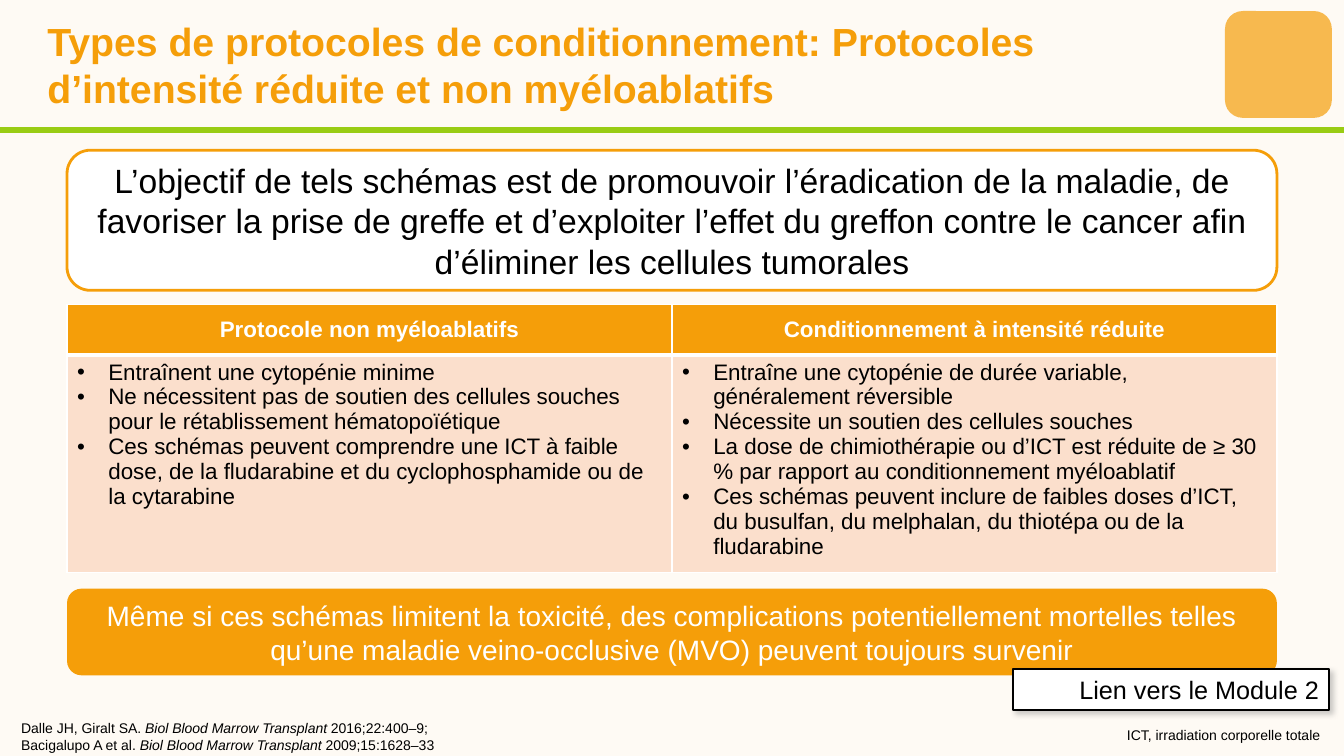
from dataclasses import dataclass

from lxml.etree import SubElement
from pptx import Presentation
from pptx.dml.color import RGBColor
from pptx.enum.shapes import MSO_CONNECTOR, MSO_SHAPE
from pptx.enum.text import MSO_ANCHOR, MSO_AUTO_SIZE, PP_ALIGN
from pptx.oxml.ns import qn
from pptx.util import Inches, Pt

TITLE = "Types de protocoles de conditionnement: Protocoles d’intensité réduite et non myéloablatifs"
OBJECTIVE = (
    "L’objectif de tels schémas est de promouvoir l’éradication de la maladie, de favoriser la prise "
    "de greffe et d’exploiter l’effet du greffon contre le cancer afin d’éliminer les cellules tumorales"
)
PROTOCOLS = {
    "Protocole non myéloablatifs": [
        "Entraînent une cytopénie minime",
        "Ne nécessitent pas de soutien des cellules souches pour le rétablissement hématopoïétique",
        "Ces schémas peuvent comprendre une ICT à faible dose, de la fludarabine et du cyclophosphamide "
        "ou de la cytarabine",
    ],
    "Conditionnement à intensité réduite": [
        "Entraîne une cytopénie de durée variable, généralement réversible",
        "Nécessite un soutien des cellules souches",
        "La dose de chimiothérapie ou d’ICT est réduite de ≥ 30 % par rapport au conditionnement myéloablatif",
        "Ces schémas peuvent inclure de faibles doses d’ICT, du busulfan, du melphalan, du thiotépa "
        "ou de la fludarabine",
    ],
}
WARNING = (
    "Même si ces schémas limitent la toxicité, des complications potentiellement mortelles telles "
    "qu’une maladie veino-occlusive (MVO) peuvent toujours survenir"
)
MODULE_LINK = "Lien vers le Module 2"
JOURNAL = "Biol Blood Marrow Transplant "
REFERENCES = [
    ("Dalle JH, Giralt SA. ", JOURNAL, "2016;22:400–9;"),
    ("Bacigalupo A et al. ", JOURNAL, "2009;15:1628–33"),
]
ABBREVIATION = "ICT, irradiation corporelle totale "


@dataclass(frozen=True)
class Theme:
    font: str = "Arial"
    background: str = "FEFAF4"
    accent: str = "F59E09"
    rule: str = "99CC14"
    cell: str = "FBDFCC"
    white: str = "FFFFFF"
    black: str = "000000"
    shadow: str = "808080"
    title_size: int = 28
    objective_size: int = 24
    warning_size: int = 20
    link_size: int = 18
    table_size: int = 16
    note_size: int = 10


THEME = Theme()
WIDTH, HEIGHT = 13.33, 7.5
CONTENT_WIDTH = 12
MARGIN = (WIDTH - CONTENT_WIDTH) / 2
ROW_HEIGHTS = [0.5, 2.16]
NOTE_WIDTH, NOTE_HEIGHT = 7.98, 0.32


def color(value):
    return RGBColor.from_string(value)


def place(shape, left, top, width, height):
    shape.left, shape.top = Inches(left), Inches(top)
    shape.width, shape.height = Inches(width), Inches(height)


def add_run(paragraph, text, size, ink=THEME.black, bold=False, italic=False):
    run = paragraph.add_run()
    run.text = text
    font = run.font
    font.name, font.size, font.bold, font.italic = THEME.font, Pt(size), bold, italic
    font.color.rgb = color(ink)


def write(frame, text, align=PP_ALIGN.LEFT, anchor=MSO_ANCHOR.MIDDLE, **run_format):
    frame.word_wrap = True
    frame.auto_size = MSO_AUTO_SIZE.NONE
    frame.vertical_anchor = anchor
    paragraph = frame.paragraphs[0]
    paragraph.alignment = align
    paragraph.space_before = Pt(0)
    if text:
        add_run(paragraph, text, **run_format)
    return paragraph


def set_bullet(paragraph, indent, character=None):
    properties = paragraph._p.get_or_add_pPr()
    properties.set("marL", str(Inches(indent)))
    properties.set("indent", str(-Inches(indent)))
    if character:
        SubElement(properties, qn("a:buFont"), typeface=THEME.font)
        SubElement(properties, qn("a:buChar"), char=character)
    else:
        SubElement(properties, qn("a:buNone"))


def add_box(slide, preset, bounds, fill, line=None, line_width=0):
    shape = slide.shapes.add_shape(preset, 0, 0, 0, 0)
    place(shape, *bounds)
    shape.shadow.inherit = False
    shape.fill.solid()
    shape.fill.fore_color.rgb = color(fill)
    if line:
        shape.line.color.rgb = color(line)
        shape.line.width = Pt(line_width)
    else:
        shape.line.fill.background()
    return shape


def add_header(slide):
    corner = add_box(slide, MSO_SHAPE.ROUNDED_RECTANGLE, (12.15, 0.11, 1.06, 1.06), THEME.accent)
    SubElement(corner._element.spPr.find(".//" + qn("a:srgbClr")), qn("a:alpha"), val="70000")
    rule = slide.shapes.add_connector(MSO_CONNECTOR.STRAIGHT, 0, Inches(1.29), Inches(WIDTH), Inches(1.29))
    rule.line.color.rgb = color(THEME.rule)
    rule.line.width = Pt(4.5)
    SubElement(rule._element.spPr, qn("a:effectLst"))
    title = slide.shapes.title
    place(title, 0.37, 0.09, 11.78, 1.1)
    write(title.text_frame, TITLE, size=THEME.title_size, ink=THEME.accent, bold=True)


def add_notes(slide):
    references, abbreviation = slide.placeholders[1], slide.placeholders[2]
    place(references, 0.11, 7.2, NOTE_WIDTH, NOTE_HEIGHT)
    place(abbreviation, 5.25, 7.1, NOTE_WIDTH, NOTE_HEIGHT)
    paragraph = write(references.text_frame, "", anchor=MSO_ANCHOR.BOTTOM)
    set_bullet(paragraph, 0)
    for number, (authors, journal, citation) in enumerate(REFERENCES):
        if number:
            paragraph.add_line_break()
        add_run(paragraph, authors, THEME.note_size)
        add_run(paragraph, journal, THEME.note_size, italic=True)
        add_run(paragraph, citation, THEME.note_size)
    paragraph = write(abbreviation.text_frame, "", align=PP_ALIGN.RIGHT, anchor=MSO_ANCHOR.BOTTOM)
    set_bullet(paragraph, 0)
    add_run(paragraph, ABBREVIATION, THEME.note_size)


def format_cell(cell, fill, bottom_width):
    properties = cell._tc.get_or_add_tcPr()
    for side, width in {"L": 1, "R": 1, "T": 1, "B": bottom_width}.items():
        border = SubElement(properties, qn(f"a:ln{side}"), w=str(Pt(width)))
        SubElement(SubElement(border, qn("a:solidFill")), qn("a:srgbClr"), val=THEME.white)
    cell.fill.solid()
    cell.fill.fore_color.rgb = color(fill)


def add_protocol_table(slide):
    frame = slide.shapes.add_table(
        len(ROW_HEIGHTS), len(PROTOCOLS), Inches(MARGIN), Inches(3.02),
        Inches(CONTENT_WIDTH), Inches(sum(ROW_HEIGHTS)),
    )
    table = frame.table
    for row, height in zip(table.rows, ROW_HEIGHTS):
        row.height = Inches(height)
    for column, (heading, points) in enumerate(PROTOCOLS.items()):
        header, body = table.cell(0, column), table.cell(1, column)
        format_cell(header, THEME.accent, 3)
        format_cell(body, THEME.cell, 1)
        header.vertical_anchor = MSO_ANCHOR.MIDDLE
        paragraph = header.text_frame.paragraphs[0]
        paragraph.alignment = PP_ALIGN.CENTER
        add_run(paragraph, heading, THEME.table_size, THEME.white, bold=True)
        for number, point in enumerate(points):
            paragraph = body.text_frame.add_paragraph() if number else body.text_frame.paragraphs[0]
            set_bullet(paragraph, 0.31, "•")
            add_run(paragraph, point, THEME.table_size)


def add_module_link(slide):
    link = add_box(slide, MSO_SHAPE.RECTANGLE, (10.05, 6.64, 3.13, 0.4), THEME.white, THEME.black, 1.5)
    write(link.text_frame, MODULE_LINK, align=PP_ALIGN.RIGHT, size=THEME.link_size)
    effects = link._element.spPr.find(qn("a:effectLst"))
    shadow = SubElement(effects, qn("a:outerShdw"), blurRad=str(Pt(4)), dist=str(Pt(3)), dir="2700000")
    tint = SubElement(shadow, qn("a:srgbClr"), val=THEME.shadow)
    SubElement(tint, qn("a:alpha"), val="40000")


def main():
    presentation = Presentation()
    presentation.slide_width, presentation.slide_height = Inches(WIDTH), Inches(HEIGHT)
    slide = presentation.slides.add_slide(presentation.slide_layouts.get_by_name("Two Content"))
    slide.background.fill.solid()
    slide.background.fill.fore_color.rgb = color(THEME.background)
    add_header(slide)
    add_notes(slide)
    add_protocol_table(slide)
    rounded = MSO_SHAPE.ROUNDED_RECTANGLE
    warning = add_box(slide, rounded, (MARGIN, 5.84, CONTENT_WIDTH, 0.86), THEME.accent)
    write(warning.text_frame, WARNING, align=PP_ALIGN.CENTER, size=THEME.warning_size, ink=THEME.white)
    objective = add_box(slide, rounded, (MARGIN, 1.49, CONTENT_WIDTH, 1.39), THEME.white, THEME.accent, 2)
    write(objective.text_frame, OBJECTIVE, align=PP_ALIGN.CENTER, size=THEME.objective_size)
    add_module_link(slide)
    presentation.save("out.pptx")


if __name__ == "__main__":
    main()
